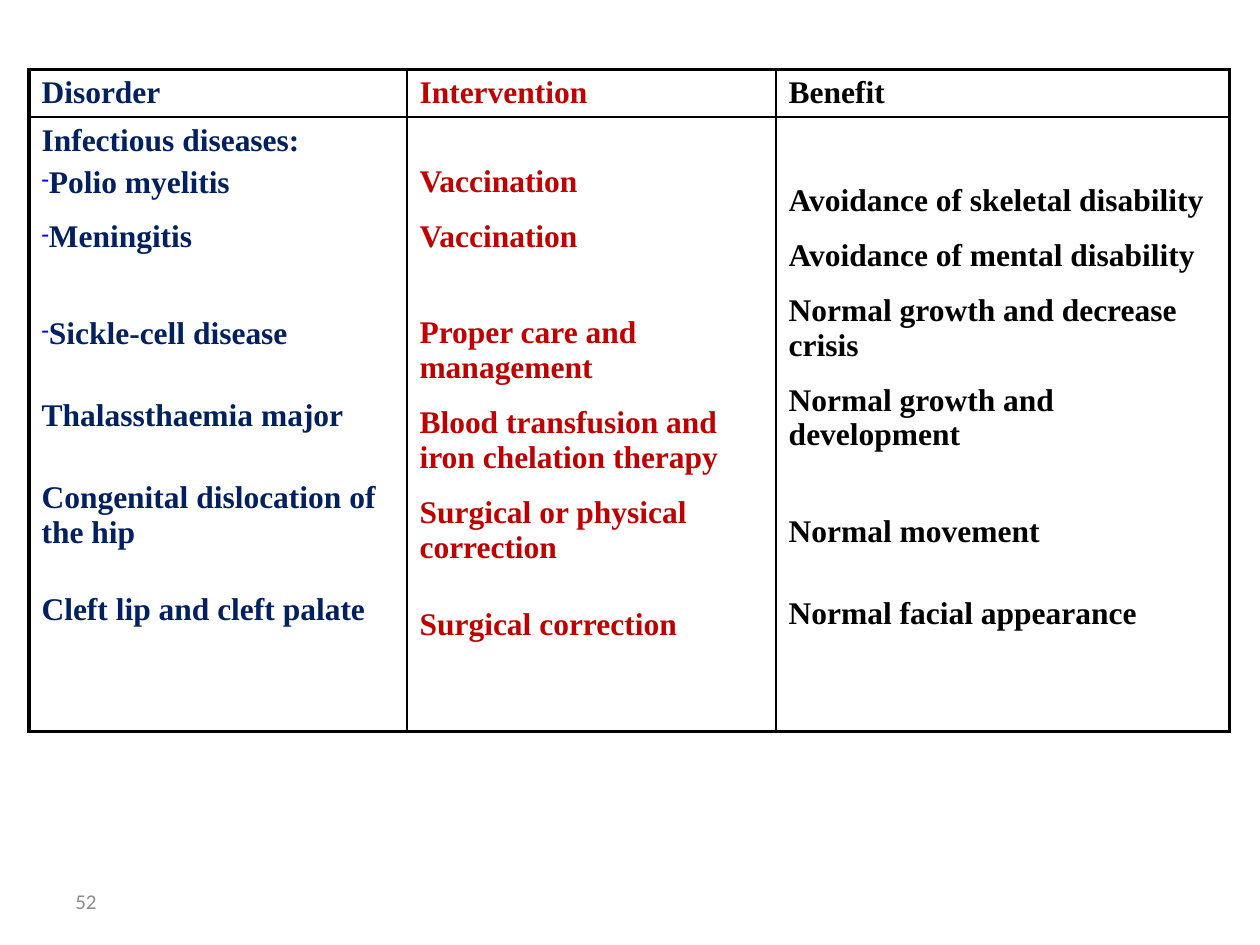
from lxml import etree
from pptx import Presentation
from pptx.dml.color import RGBColor
from pptx.enum.text import MSO_ANCHOR, PP_ALIGN
from pptx.oxml.ns import qn
from pptx.util import Inches, Pt

MIDDLE = MSO_ANCHOR.MIDDLE
LEFT = PP_ALIGN.LEFT
NAVY = RGBColor(0x00, 0x20, 0x60)
RED = RGBColor(0xC0, 0x00, 0x00)
BLACK = RGBColor(0x00, 0x00, 0x00)
BLUE = RGBColor(0x00, 0x00, 0xFF)
GRAY = RGBColor(0x8C, 0x8C, 0x8C)
SERIF, SANS = "Times New Roman", "Calibri"
THICK, THIN = Pt(2.25), Pt(1)
# Space before a paragraph, in points
NEAR, STEP, WIDE, FAR = 4, 11.4, 27, 35

# Heading, colour, width, top margin of the body, (space before, text, dash)
COLS = [
    ("Disorder", NAVY, 3, 0.05, [
        (0, "Infectious diseases:", False),
        (NEAR, "Polio myelitis", True),
        (STEP, "Meningitis", True),
        (FAR, "Sickle-cell disease", True),
        (WIDE, "Thalassthaemia major", False),
        (WIDE, "Congenital dislocation of the hip", False),
        (24.4, "Cleft lip and cleft palate", False)]),
    ("Intervention", RED, 2.93, 0.38, [
        (0, "Vaccination", False),
        (STEP, "Vaccination", False),
        (FAR, "Proper care and management", False),
        (STEP, "Blood transfusion and iron chelation therapy", False),
        (STEP, "Surgical or physical correction", False),
        (24.4, "Surgical correction", False)]),
    ("Benefit", BLACK, 3.6, 0.53, [
        (0, "Avoidance of skeletal disability", False),
        (STEP, "Avoidance of mental disability", False),
        (STEP, "Normal growth and decrease crisis", False),
        (STEP, "Normal growth and development", False),
        (FAR, "Normal movement", False),
        (WIDE, "Normal facial appearance", False)]),
]
ROWS = [0.37, 4.88]


def add_run(para, text, size, font, color, bold=False):
    run = para.add_run()
    run.text = text
    run.font.size = Pt(size)
    run.font.name = font
    run.font.color.rgb = color
    run.font.bold = bold


def add_dash(para):
    props = para._p.get_or_add_pPr()
    props.set("marL", "0")
    props.set("indent", "0")
    tint = etree.SubElement(props, qn("a:buClr"))
    etree.SubElement(tint, qn("a:srgbClr"), val=str(BLUE))
    etree.SubElement(props, qn("a:buSzPct"), val="70000")
    etree.SubElement(props, qn("a:buChar"), char="-")


def set_edges(cell, row, col):
    outer = {"L": col == 0, "R": col == len(COLS) - 1,
             "T": row == 0, "B": row == len(ROWS) - 1}
    props = cell._tc.get_or_add_tcPr()
    for side, thick in outer.items():
        line = etree.SubElement(props, qn(f"a:ln{side}"),
                                w=str(THICK if thick else THIN))
        fill = etree.SubElement(line, qn("a:solidFill"))
        etree.SubElement(fill, qn("a:srgbClr"), val=str(BLACK))


def fill_cell(cell, items, color):
    frame = cell.text_frame
    for i, (gap, text, dash) in enumerate(items):
        para = frame.add_paragraph() if i else frame.paragraphs[0]
        para.space_before = Pt(gap)
        if dash:
            add_dash(para)
        add_run(para, text, 18, SERIF, color, True)


def add_grid(slide, left, top, width, height):
    table = slide.shapes.add_table(len(ROWS), len(COLS),
                                   left, top, width, height).table
    table.first_row = table.horz_banding = False
    for row, tall in zip(table.rows, ROWS):
        row.height = Inches(tall)
    for c, (head, color, wide, inset, items) in enumerate(COLS):
        table.columns[c].width = Inches(wide)
        for r, part in enumerate([[(0, head, False)], items]):
            cell = table.cell(r, c)
            set_edges(cell, r, c)
            cell.fill.background()
            fill_cell(cell, part, color)
        # Lower the first line of the body
        table.cell(1, c).margin_top = Inches(inset)


def add_number(slide, left, top, width, height):
    frame = slide.shapes.add_textbox(left, top, width, height).text_frame
    frame.word_wrap = True
    frame.vertical_anchor = MIDDLE
    para = frame.paragraphs[0]
    para.alignment = LEFT
    add_run(para, "52", 12, SANS, GRAY)


def main():
    deck = Presentation()
    deck.slide_width, deck.slide_height = Inches(10), Inches(7.5)
    slide = deck.slides.add_slide(deck.slide_layouts[6])
    # Table of disorders
    add_grid(slide, Inches(0.23), Inches(0.55), Inches(9.53), Inches(5.25))
    # Page number
    add_number(slide, Inches(0.5), Inches(6.95), Inches(2.33), Inches(0.4))
    deck.save("out.pptx")


if __name__ == "__main__":
    main()
